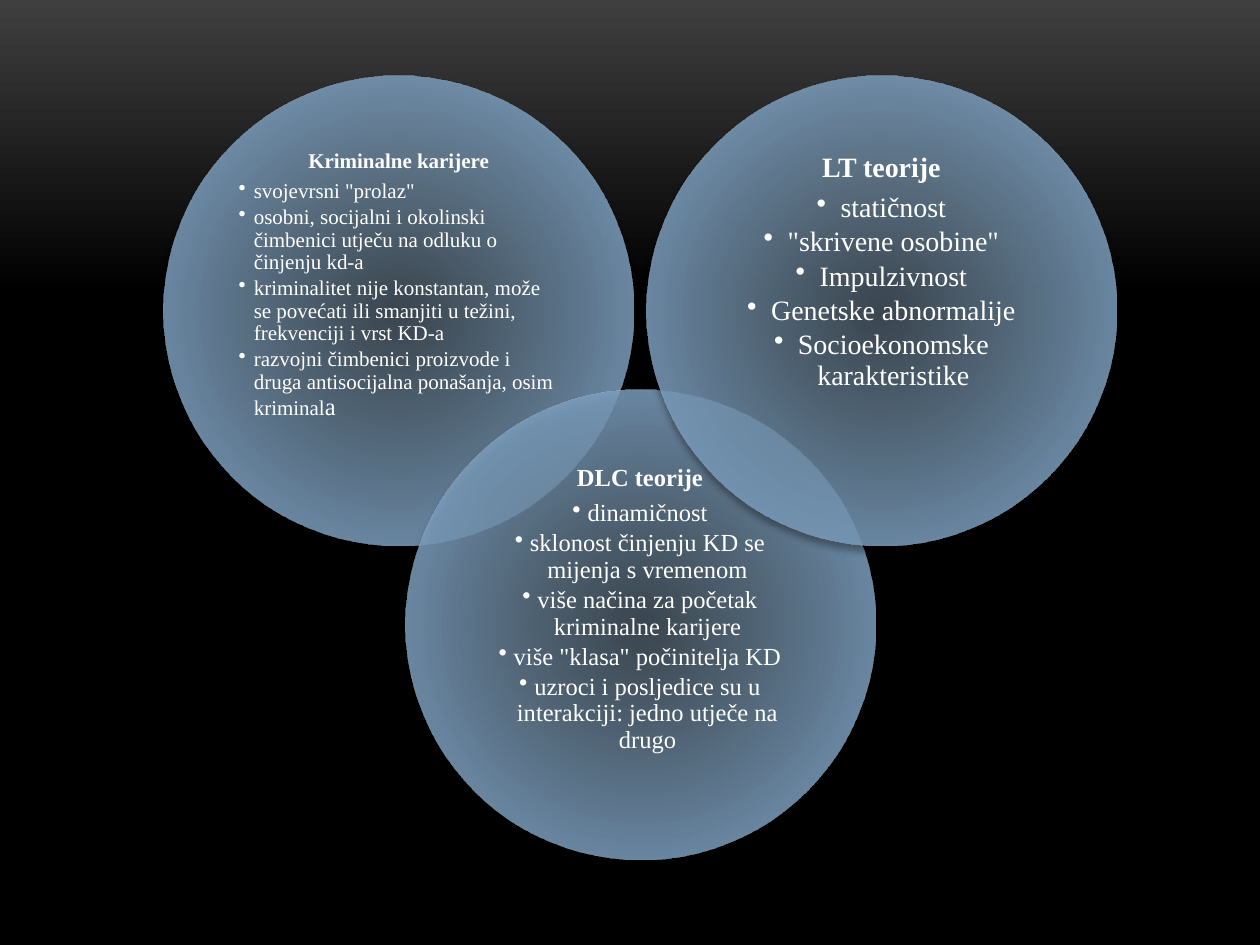
"""Build a slide of three overlapping circles comparing criminological theories."""
from dataclasses import dataclass

from lxml import etree
from pptx import Presentation
from pptx.dml.color import RGBColor
from pptx.enum.shapes import MSO_SHAPE
from pptx.enum.text import MSO_ANCHOR, PP_ALIGN
from pptx.util import Inches, Pt

OVAL = MSO_SHAPE.OVAL
TOP = MSO_ANCHOR.TOP
LEFT, CENTER = PP_ALIGN.LEFT, PP_ALIGN.CENTER
NS = "http://schemas.openxmlformats.org/drawingml/2006/main"


@dataclass(frozen=True)
class Theme:
    font: str = "Times New Roman"
    text: str = "FFFFFF"
    backdrop: tuple = ((0, "3F3F3F", 100), (31, "000000", 100), (100, "000000", 100))
    circle: tuple = ((0, "758DA1", 50), (100, "7FA6CA", 100))
    shadow: str = "000000"
    small: int = 12
    medium: int = 14
    large: int = 16


THEME = Theme()

THEORIES = [
    {"heading": "Kriminalne karijere", "column": 0, "row": 0, "size": THEME.small,
     "inset": 0.05, "indent": 0.12, "align": LEFT,
     "points": [
         ['svojevrsni "prolaz"'],
         ["osobni, socijalni i okolinski čimbenici utječu na odluku o činjenju kd-a"],
         ["kriminalitet nije konstantan, može se povećati ili smanjiti u težini, "
          "frekvenciji i vrst KD-a"],
         ["razvojni čimbenici proizvode i druga antisocijalna ponašanja, osim kriminal",
          ("a", THEME.medium)]]},
    {"heading": "DLC teorije", "column": 1, "row": 1, "size": THEME.medium,
     "inset": 0.06, "indent": 0.12, "align": CENTER,
     "points": [
         ["dinamičnost"],
         ["sklonost činjenju KD se mijenja s vremenom"],
         ["više načina za početak kriminalne karijere"],
         ['više "klasa" počinitelja KD'],
         ["uzroci i posljedice su u interakciji: jedno utječe na drugo"]]},
    {"heading": "LT teorije", "column": 2, "row": 0, "size": THEME.large,
     "inset": 0.07, "indent": 0.19, "align": CENTER,
     "points": [
         ["statičnost"],
         ['"skrivene osobine"'],
         ["Impulzivnost"],
         ["Genetske abnormalije"],
         ["Socioekonomske karakteristike"]]},
]

DIAMETER, TEXT_SIDE = 3.73, 2.64
ORIGIN_X, ORIGIN_Y = 1.3, 0.6
STEP_X, STEP_Y = 1.915, 2.49


def add_xml(parent, markup):
    parent.append(etree.fromstring(f'<a:root xmlns:a="{NS}">{markup}</a:root>')[0])


def gradient(stops, direction):
    stop_markup = "".join(
        f'<a:gs pos="{position * 1000}"><a:srgbClr val="{color}">'
        f'<a:alpha val="{opacity * 1000}"/></a:srgbClr></a:gs>'
        for position, color, opacity in stops)
    return f'<a:gradFill rotWithShape="1"><a:gsLst>{stop_markup}</a:gsLst>{direction}</a:gradFill>'


def paint_background(slide):
    slide.background.fill.solid()
    properties = slide.background._cSld.bg.bgPr
    properties.remove(properties[0])
    add_xml(properties, gradient(THEME.backdrop, '<a:lin ang="5400000" scaled="0"/>'))
    properties.insert(0, properties[-1])


def add_circle(slide, left, top):
    circle = slide.shapes.add_shape(
        OVAL, Inches(left), Inches(top), Inches(DIAMETER), Inches(DIAMETER))
    properties = circle._element.spPr
    add_xml(properties, gradient(
        THEME.circle,
        '<a:path path="circle"><a:fillToRect l="100000" t="100000" r="100000" b="100000"/></a:path>'))
    circle.line.fill.background()
    add_xml(properties,
            '<a:effectLst><a:outerShdw blurRad="50800" dist="43180" dir="5400000" rotWithShape="0">'
            f'<a:srgbClr val="{THEME.shadow}"><a:alpha val="40000"/></a:srgbClr>'
            '</a:outerShdw></a:effectLst>')


def write(paragraph, parts, *, size, align, after, bold=False, indent=None):
    paragraph.alignment = align
    paragraph.line_spacing = 0.9
    properties = paragraph._p.get_or_add_pPr()
    add_xml(properties, f'<a:spcAft><a:spcPct val="{after * 1000}"/></a:spcAft>')
    if indent:
        paragraph.level = 1
        properties.set("marL", str(Inches(indent)))
        properties.set("indent", str(-Inches(indent)))
        add_xml(properties, '<a:buChar char="•"/>')
    for part in parts:
        words, points = part if isinstance(part, tuple) else (part, size)
        run = paragraph.add_run()
        run.text = words
        run.font.name = THEME.font
        run.font.size = Pt(points)
        run.font.bold = bold
        run.font.color.rgb = RGBColor.from_string(THEME.text)


def add_theory(slide, theory):
    left = ORIGIN_X + theory["column"] * STEP_X
    top = ORIGIN_Y + theory["row"] * STEP_Y
    add_circle(slide, left, top)
    margin = (DIAMETER - TEXT_SIDE) / 2
    body = slide.shapes.add_textbox(
        Inches(left + margin), Inches(top + margin),
        Inches(TEXT_SIDE), Inches(TEXT_SIDE)).text_frame
    body.word_wrap = True
    body.vertical_anchor = TOP
    inset = Inches(theory["inset"])
    body.margin_left = body.margin_top = body.margin_right = body.margin_bottom = inset
    write(body.paragraphs[0], [theory["heading"]], size=theory["size"],
          align=CENTER, after=35, bold=True)
    for point in theory["points"]:
        write(body.add_paragraph(), point, size=theory["size"],
              align=theory["align"], after=15, indent=theory["indent"])


def main():
    deck = Presentation()
    deck.slide_width, deck.slide_height = Inches(10), Inches(7.5)
    slide = deck.slides.add_slide(deck.slide_layouts[6])
    paint_background(slide)
    for theory in THEORIES:
        add_theory(slide, theory)
    deck.save("out.pptx")


if __name__ == "__main__":
    main()
